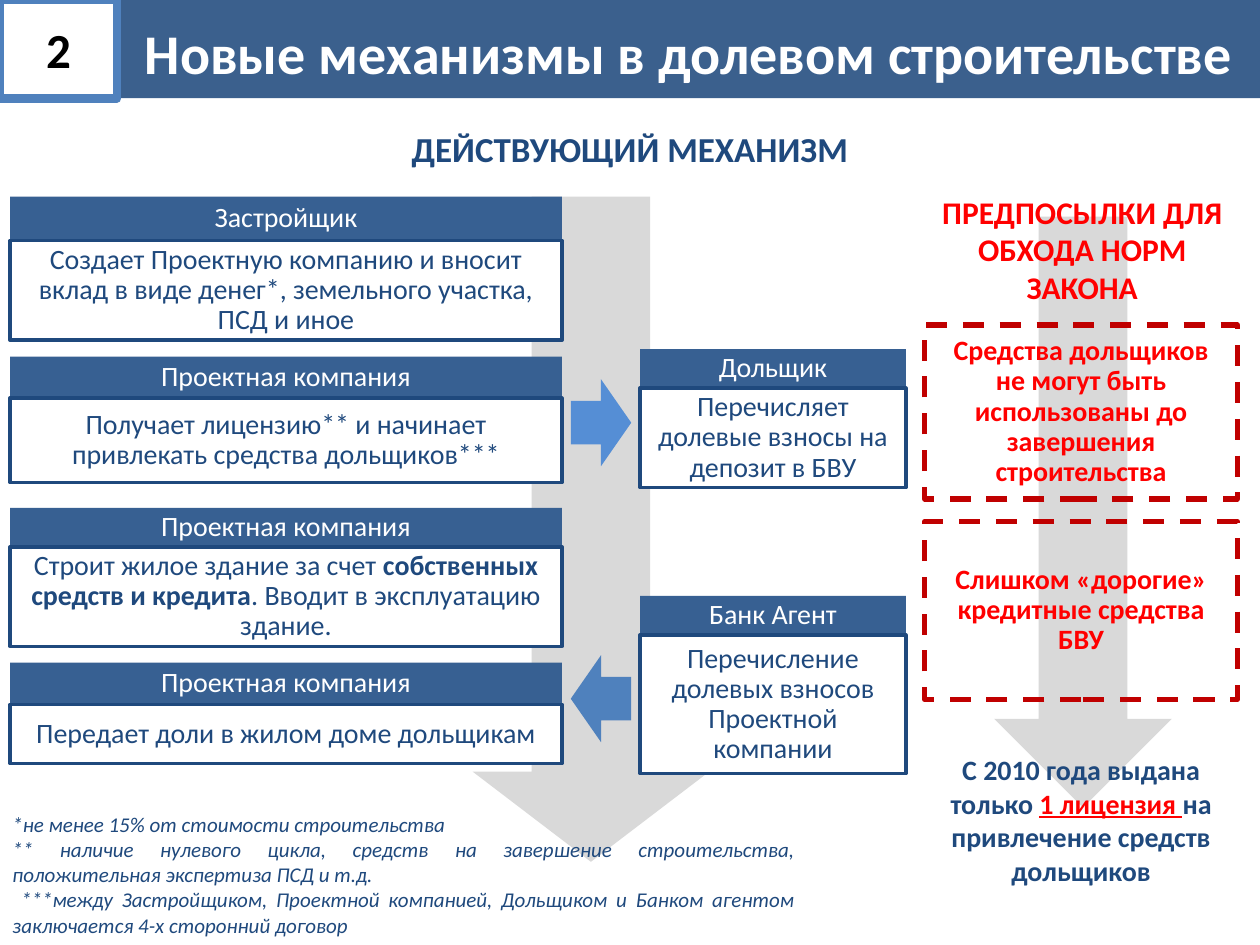
from dataclasses import dataclass

from lxml.etree import SubElement
from pptx import Presentation
from pptx.dml.color import RGBColor
from pptx.enum.dml import MSO_LINE
from pptx.enum.shapes import MSO_SHAPE
from pptx.enum.text import MSO_ANCHOR, PP_ALIGN
from pptx.oxml.ns import qn
from pptx.util import Inches, Pt


@dataclass(frozen=True)
class Theme:
    """Colours, type sizes, font and line spacing of the slide."""
    font: str = "Calibri"
    navy: str = "1F497D"
    bar: str = "376092"
    blue: str = "4F81BD"
    light_blue: str = "558ED5"
    grey: str = "D9D9D9"
    red: str = "FF0000"
    dark_red: str = "C00000"
    white: str = "FFFFFF"
    black: str = "000000"
    note: int = 12
    body: int = 16
    caption: int = 18
    heading: int = 20
    number: int = 28
    title: int = 32
    tight: float = 0.9


T = Theme()


def rgb(value):
    """Turn a hex string into a colour."""
    return RGBColor.from_string(value)


def add_shape(s, kind, box, fill=None, line=None, width=2):
    """Add a flat preset shape in a box given in inches."""
    sp = s.shapes.add_shape(kind, *map(Inches, box))
    sp.shadow.inherit = False
    if fill:
        sp.fill.solid()
        sp.fill.fore_color.rgb = rgb(fill)
    else:
        sp.fill.background()
    if line:
        sp.line.color.rgb = rgb(line)
        sp.line.width = Pt(width)
    else:
        sp.line.fill.background()
    return sp


def write(sp, paragraphs, size, color, bold=False, italic=False,
          align=PP_ALIGN.CENTER, anchor=MSO_ANCHOR.MIDDLE):
    """Fill a shape with paragraphs, each a string or a list of run strings."""
    tf = sp.text_frame
    tf.word_wrap = True
    tf.vertical_anchor = anchor
    for i, runs in enumerate(paragraphs):
        p = tf.add_paragraph() if i else tf.paragraphs[0]
        p.alignment = align
        p.font.name = T.font
        p.font.size = Pt(size)
        p.font.bold = bold
        p.font.italic = italic
        for text in [runs] if isinstance(runs, str) else runs:
            r = p.add_run()
            r.text = text
            r.font.color.rgb = rgb(color)
    return tf.paragraphs[0]


def write_tight(sp, runs, color, bold=False):
    """Fill a box with one closely set paragraph that stays inside its border."""
    sp.text_frame.margin_top = sp.text_frame.margin_bottom = 0
    p = write(sp, [runs], T.body, color, bold=bold)
    p.line_spacing = T.tight
    return p


def add_label(s, box, paragraphs, size, color, **style):
    """Add a text box and return its first paragraph."""
    return write(s.shapes.add_textbox(*map(Inches, box)), paragraphs, size, color, **style)


def header(s, box, number, title):
    """Place the title band and the slide number at its left."""
    x, y, w, h = box
    band = add_shape(s, MSO_SHAPE.RECTANGLE, (x + 0.94, y, w - 0.94, h), T.navy)
    color = band.fill._xPr.find(qn("a:solidFill"))[0]
    SubElement(color, qn("a:alpha")).set("val", "87000")
    p = write(band, [title], T.title, T.white, bold=True)
    p.line_spacing = 1.1
    p.space_after = Pt(9)
    tile = add_shape(s, MSO_SHAPE.RECTANGLE, (x, y, 0.93, h), line=T.blue, width=5)
    write(tile, [number], T.number, T.black, bold=True)


def step(s, box, actor, action, offset):
    """Place a step: the actor's bar, and the action from offset down to the box end."""
    x, y, w, h = box
    bar = add_shape(s, MSO_SHAPE.RECTANGLE, (x, y, w, offset), T.bar)
    write_tight(bar, actor, T.white)
    card = add_shape(s, MSO_SHAPE.RECTANGLE, (x, y + offset, w, h - offset), T.white, T.navy)
    return write_tight(card, action, T.navy)


def mechanism(s, box):
    """Place the current mechanism: the flow arrow, the steps and the links."""
    x, y, w, h = box
    flow = add_shape(s, MSO_SHAPE.DOWN_ARROW, (x + 3.67, y, 1.88, h), T.grey)
    flow.adjustments[1] = 0.381
    company = "Проектная компания"
    left_steps = [
        (0, 1.14, 0.35, "Застройщик",
         "Создает Проектную компанию и вносит вклад в виде денег*, земельного участка, ПСД и иное"),
        (1.27, 1, 0.33, company,
         "Получает лицензию** и начинает привлекать средства дольщиков***"),
        (2.47, 1.1, 0.31, company,
         ["Строит жилое здание за счет ", "собственных средств и кредита",
          ". Вводит в эксплуатацию здание."]),
        (3.7, 0.8, 0.33, company, "Передает доли в жилом доме дольщикам"),
    ]
    right_steps = [
        (1.21, 1.1, 0.31, "Дольщик", "Перечисляет долевые взносы на депозит в БВУ"),
        (3.17, 1.41, 0.31, "Банк Агент", "Перечисление долевых взносов Проектной компании"),
    ]
    for left, width, steps in ((x, 4.38, left_steps), (x + w - 2.11, 2.11, right_steps)):
        for top, height, offset, actor, action in steps:
            p = step(s, (left, y + top, width, height), actor, action, offset)
            if len(p.runs) > 1:
                p.runs[1].font.bold = True
    for top, color, turn in ((1.45, T.light_blue, 0), (3.64, T.blue, 180)):
        link = add_shape(s, MSO_SHAPE.RIGHT_ARROW, (x + 4.45, y + top, 0.48, 0.69), color)
        link.rotation = turn


def footnotes(s, box):
    """Place the justified notes."""
    add_label(s, box, [
        "*не менее 15% от стоимости строительства",
        "** наличие нулевого цикла, средств на завершение строительства, "
        "положительная экспертиза ПСД и т.д.",
        " ***между Застройщиком, Проектной компанией, Дольщиком и Банком агентом "
        "заключается 4-х сторонний договор",
    ], T.note, T.navy, italic=True, align=PP_ALIGN.JUSTIFY, anchor=MSO_ANCHOR.TOP)


def loopholes(s, box):
    """Place the reasons for evading the law and their outcome."""
    x, y, w, h = box
    add_shape(s, MSO_SHAPE.DOWN_ARROW, (x + 0.55, y + 0.24, 1.41, 4.69), T.grey)
    reasons = [
        (1.1, 1.38, "Средства дольщиков не могут быть использованы до завершения строительства"),
        (2.66, 1.41, "Слишком «дорогие» кредитные средства БВУ"),
    ]
    for top, height, text in reasons:
        frame = add_shape(s, MSO_SHAPE.RECTANGLE, (x, y + top, w, height),
                          line=T.dark_red, width=3)
        frame.line.dash_style = MSO_LINE.DASH
        write_tight(frame, text, T.red, bold=True)
    p = add_label(s, (x, y, w + 0.02, 0.96), ["ПРЕДПОСЫЛКИ ДЛЯ ОБХОДА НОРМ ЗАКОНА"],
                  T.caption, T.red, bold=True, anchor=MSO_ANCHOR.TOP)
    p.space_after = Pt(6)
    p = add_label(s, (x, y + h - 1.19, w, 1.19),
                  [["С 2010 года выдана только ", "1 лицензия ",
                    "на привлечение средств дольщиков"]],
                  T.body, T.navy, bold=True)
    p.runs[1].font.color.rgb = rgb(T.red)
    p.runs[1].font.underline = True


def main():
    """Build the slide and save it."""
    prs = Presentation()
    prs.slide_width, prs.slide_height = Inches(10), Inches(7.5)
    s = prs.slides.add_slide(prs.slide_layouts[6])
    mechanism(s, (0.08, 1.56, 7.11, 5.28))
    footnotes(s, (0, 6.39, 6.41, 1.11))
    loopholes(s, (7.34, 1.48, 2.48, 5.62))
    add_label(s, (2.42, 0.94, 5.16, 0.47), ["ДЕЙСТВУЮЩИЙ МЕХАНИЗМ"],
              T.heading, T.navy, bold=True)
    header(s, (0, 0, 10, 0.78), "2", "Новые механизмы в долевом строительстве")
    prs.save("out.pptx")


if __name__ == "__main__":
    main()
